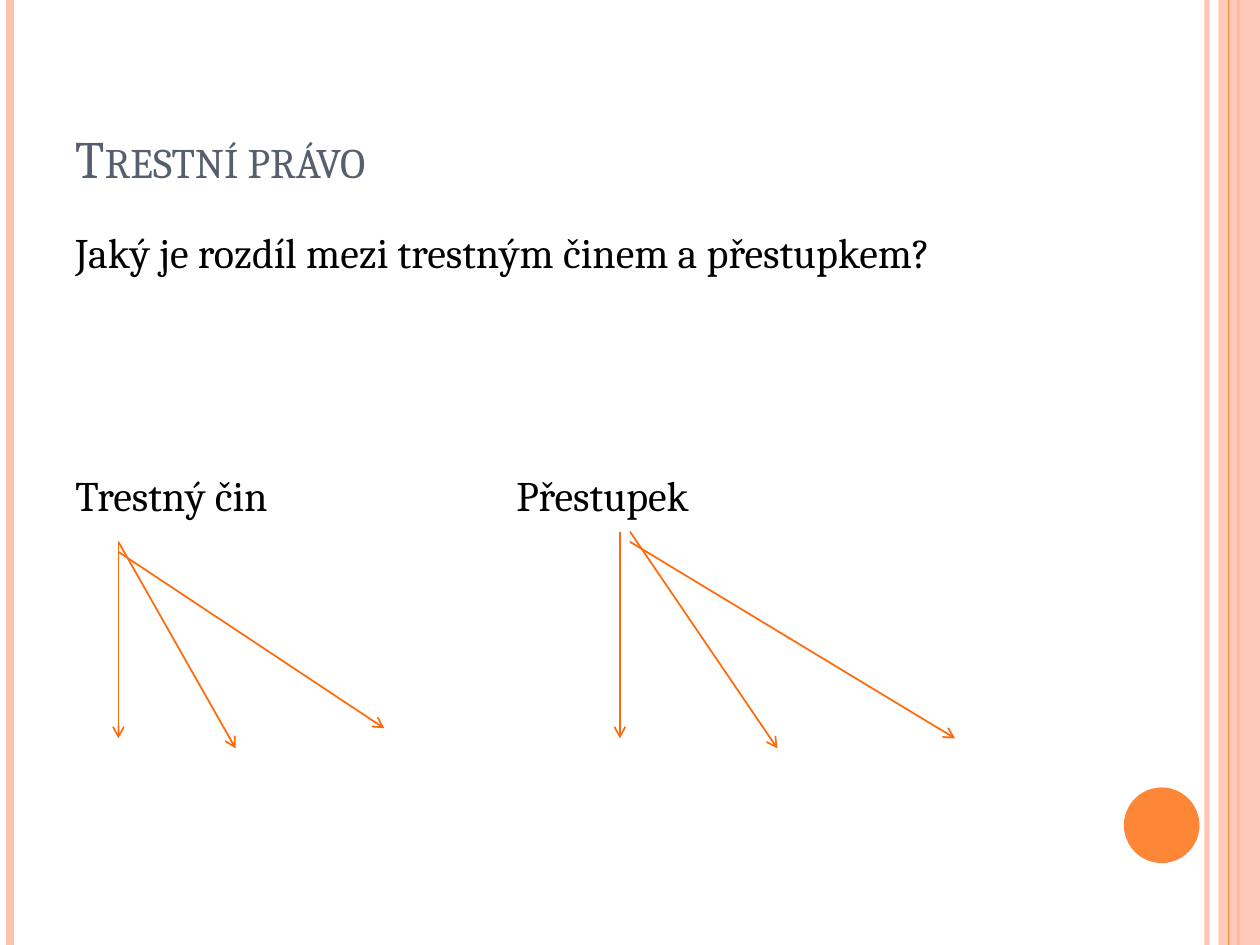
from pptx import Presentation
from pptx.util import Inches, Pt
from pptx.dml.color import RGBColor
from pptx.enum.shapes import MSO_CONNECTOR, MSO_SHAPE
from pptx.enum.text import MSO_ANCHOR
from pptx.oxml.ns import qn
from lxml.etree import SubElement

PEACH, ORANGE, ARROW = "FEC3AE", "FE8637", "FF6B0A"

deck = Presentation()
deck.slide_width, deck.slide_height = Inches(10), Inches(7.5)
slide = deck.slides.add_slide(deck.slide_layouts[6])
shapes = slide.shapes


def paint(color, code, alpha=100):
    """Set a solid colour; alpha is the opacity in percent."""
    color.solid()
    color.fore_color.rgb = RGBColor.from_string(code)
    if alpha < 100:
        tint = color._xPr.find(qn("a:solidFill"))[0]
        SubElement(tint, qn("a:alpha"), val=str(alpha * 1000))


def draw_line(start, end, code, width, alpha=100):
    line = shapes.add_connector(
        MSO_CONNECTOR.STRAIGHT, *(Inches(n) for n in start + end))
    line.line.width = Pt(width)
    paint(line.line.fill, code, alpha)
    SubElement(line._element.spPr, qn("a:effectLst"))
    return line


# Side stripes, with the band and the disc between them
for x, code, width, alpha in [(9.58, PEACH, 3, 93), (0.08, PEACH, 4.5, 100),
                              (9.83, ORANGE, 1.5, 100)]:
    draw_line((x, 0), (x, 7.5), code, width, alpha)

for kind, box, code, alpha in [
        (MSO_SHAPE.RECTANGLE, (9.67, 0, 0.33, 7.5), PEACH, 87),
        (MSO_SHAPE.OVAL, (8.92, 6.25, 0.6, 0.6), ORANGE, 100)]:
    part = shapes.add_shape(kind, *(Inches(n) for n in box))
    part.shadow.inherit = False
    part.line.fill.background()
    paint(part.fill, code, alpha)

draw_line((9.75, 0), (9.75, 7.5), ORANGE, 0.75)

# Title, question and the two terms
for text, box, size, code in [
        ("Trestní právo", (0.5, 0.3, 8.17, 1.25), 30, "575F6D"),
        ("Jaký je rozdíl mezi trestným činem a přestupkem?",
         (0.5, 1.75, 8.17, 0.5), 24, "000000"),
        ("Trestný čin", (0.5, 3.68, 3, 0.5), 24, "000000"),
        ("Přestupek", (4, 3.68, 3, 0.5), 24, "000000")]:
    frame = shapes.add_textbox(*(Inches(n) for n in box)).text_frame
    frame.word_wrap = True
    para = frame.paragraphs[0]
    para.text = text
    para.font.name, para.font.size = "Cambria", Pt(size)
    para.font.color.rgb = RGBColor.from_string(code)
    if size == 30:
        frame.vertical_anchor = MSO_ANCHOR.BOTTOM
        para.runs[0]._r.get_or_add_rPr().set("cap", "small")

# Three arrows fan out below each term
for start, end in [
        ((0.94, 4.3), (0.94, 5.86)),
        ((0.94, 4.3), (1.87, 5.94)),
        ((0.94, 4.38), (3.05, 5.78)),
        ((4.92, 4.22), (4.92, 5.86)),
        ((5, 4.22), (6.17, 5.94)),
        ((5, 4.3), (7.58, 5.86))]:
    arrow = draw_line(start, end, ARROW, 1)
    SubElement(arrow.line._get_or_add_ln(), qn("a:tailEnd"), type="arrow")

deck.save("out.pptx")
